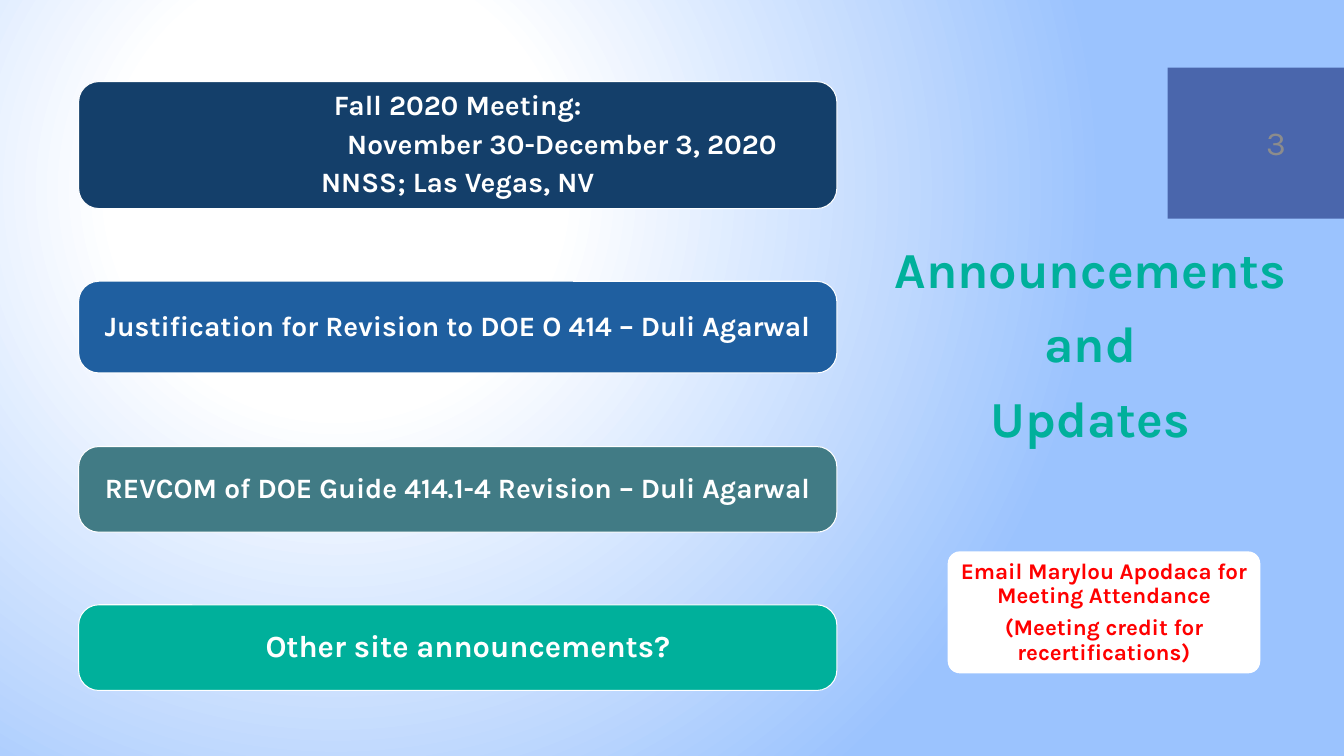
"""Build the announcements and updates slide."""
import lxml.etree
import pptx
import pptx.dml.color
import pptx.enum.shapes
import pptx.enum.text
import pptx.oxml.ns
import pptx.util

Inches = pptx.util.Inches
Pt = pptx.util.Pt
RGBColor = pptx.dml.color.RGBColor
MIDDLE = pptx.enum.text.MSO_ANCHOR.MIDDLE
CENTER = pptx.enum.text.PP_ALIGN.CENTER
LEFT = pptx.enum.text.PP_ALIGN.LEFT
SHAPES = pptx.enum.shapes.MSO_SHAPE

FONT = "Karla"
WHITE = RGBColor(0xFF, 0xFF, 0xFF)
SKY = RGBColor(0x9B, 0xC3, 0xFE)
NAVY = RGBColor(0x14, 0x3F, 0x6A)
BLUE = RGBColor(0x1F, 0x5F, 0xA0)
SLATE = RGBColor(0x41, 0x7B, 0x85)
GREEN = RGBColor(0x00, 0xB0, 0x9B)
INDIGO = RGBColor(0x4A, 0x66, 0xAC)
RED = RGBColor(0xFF, 0x00, 0x00)
GRAY = RGBColor(0x8C, 0x8C, 0x8C)

CARD_LEFT, CARD_WIDTH, CARD_RADIUS = 0.78, 7.52, 0.2
CARDS = [
    (0.81, 1.26, NAVY, 20, [("Fall 2020 Meeting:", 0),
                            ("November 30-December 3, 2020", 2.07),
                            ("NNSS; Las Vegas, NV", 0)]),
    (2.79, 0.91, BLUE, 20,
     [("Justification for Revision to DOE O 414 – Duli Agarwal", 0)]),
    (4.43, 0.85, SLATE, 20,
     [("REVCOM of DOE Guide 414.1-4 Revision – Duli Agarwal", 0)]),
    (6.0, 0.85, GREEN, 22, [("Other site announcements?", 0.2)]),
]
CREDIT_NOTE = [("Email Marylou Apodaca for Meeting Attendance", 0),
               ("(Meeting credit for recertifications)", 0)]


def paint_background(slide):
    fill = slide.background.fill
    fill.gradient()
    for stop, position, color in zip(fill.gradient_stops, (0.29, 1), (WHITE, SKY)):
        stop.position = position
        stop.color.rgb = color
    qn = pptx.oxml.ns.qn
    gradient = slide.element.find(".//" + qn("a:gradFill"))
    gradient.remove(gradient.find(qn("a:lin")))
    glow = lxml.etree.SubElement(gradient, qn("a:path"), path="circle")
    lxml.etree.SubElement(glow, qn("a:fillToRect"),
                          l="50000", t="50000", r="100000", b="100000")


def format_paragraph(paragraph, size, color, bold=True, align=CENTER):
    paragraph.alignment = align
    for run in paragraph.runs:
        run.font.name = FONT
        run.font.size = Pt(size)
        run.font.bold = bold
        run.font.color.rgb = color


def add_block(slide, kind, left, top, width, height, color):
    block = slide.shapes.add_shape(kind, Inches(left), Inches(top),
                                   Inches(width), Inches(height))
    block.shadow.inherit = False
    block.fill.solid()
    block.fill.fore_color.rgb = color
    block.line.fill.background()
    return block


def add_card(slide, left, top, width, height, radius, color, lines, size, ink):
    card = add_block(slide, SHAPES.ROUNDED_RECTANGLE, left, top, width, height, color)
    card.adjustments[0] = radius / height
    frame = card.text_frame
    frame.word_wrap = True
    frame.vertical_anchor = MIDDLE
    frame.margin_left = frame.margin_right = Inches(0.09)
    frame.margin_top = frame.margin_bottom = Inches(0.09)
    frame.text = "\n".join(text for text, _ in lines)
    for paragraph, (_, indent) in zip(frame.paragraphs, lines):
        paragraph.line_spacing = 0.9
        paragraph.space_after = Pt(6)
        if indent:
            paragraph._p.get_or_add_pPr().set("marL", str(Inches(indent)))
        format_paragraph(paragraph, size, ink)
    return card


def place_title(slide):
    title = slide.shapes.title
    title.left, title.top = Inches(8.65), Inches(2.31)
    title.width, title.height = Inches(4.33), Inches(2.92)
    frame = title.text_frame
    frame.text = "Announcements\nand\nUpdates"
    frame.word_wrap = True
    frame.auto_size = pptx.enum.text.MSO_AUTO_SIZE.NONE
    frame.vertical_anchor = pptx.enum.text.MSO_ANCHOR.TOP
    for index, paragraph in enumerate(frame.paragraphs):
        paragraph.space_before = Pt(10 if index else 0)
        format_paragraph(paragraph, 36, GREEN)


def add_page_number(slide):
    add_block(slide, SHAPES.RECTANGLE, 11.58, 0.67, 1.75, 1.5, INDIGO)
    number = slide.shapes.add_textbox(Inches(12.46), Inches(1.14),
                                      Inches(0.66), Inches(0.54))
    frame = number.text_frame
    frame.word_wrap = True
    frame.vertical_anchor = MIDDLE
    frame.text = "3"
    format_paragraph(frame.paragraphs[0], 24, GRAY, bold=False, align=LEFT)


def main():
    presentation = pptx.Presentation()
    presentation.slide_width = Inches(13.33)
    presentation.slide_height = Inches(7.5)
    slide = presentation.slides.add_slide(presentation.slide_layouts[5])
    paint_background(slide)
    place_title(slide)
    add_page_number(slide)
    for top, height, color, size, lines in CARDS:
        card = add_card(slide, CARD_LEFT, top, CARD_WIDTH, height, CARD_RADIUS,
                        color, lines, size, WHITE)
        card.line.color.rgb = WHITE
        card.line.width = Pt(0.75)
    add_card(slide, 9.4, 5.47, 3.1, 1.21, 0.12, WHITE, CREDIT_NOTE, 16, RED)
    presentation.save("out.pptx")


if __name__ == "__main__":
    main()
